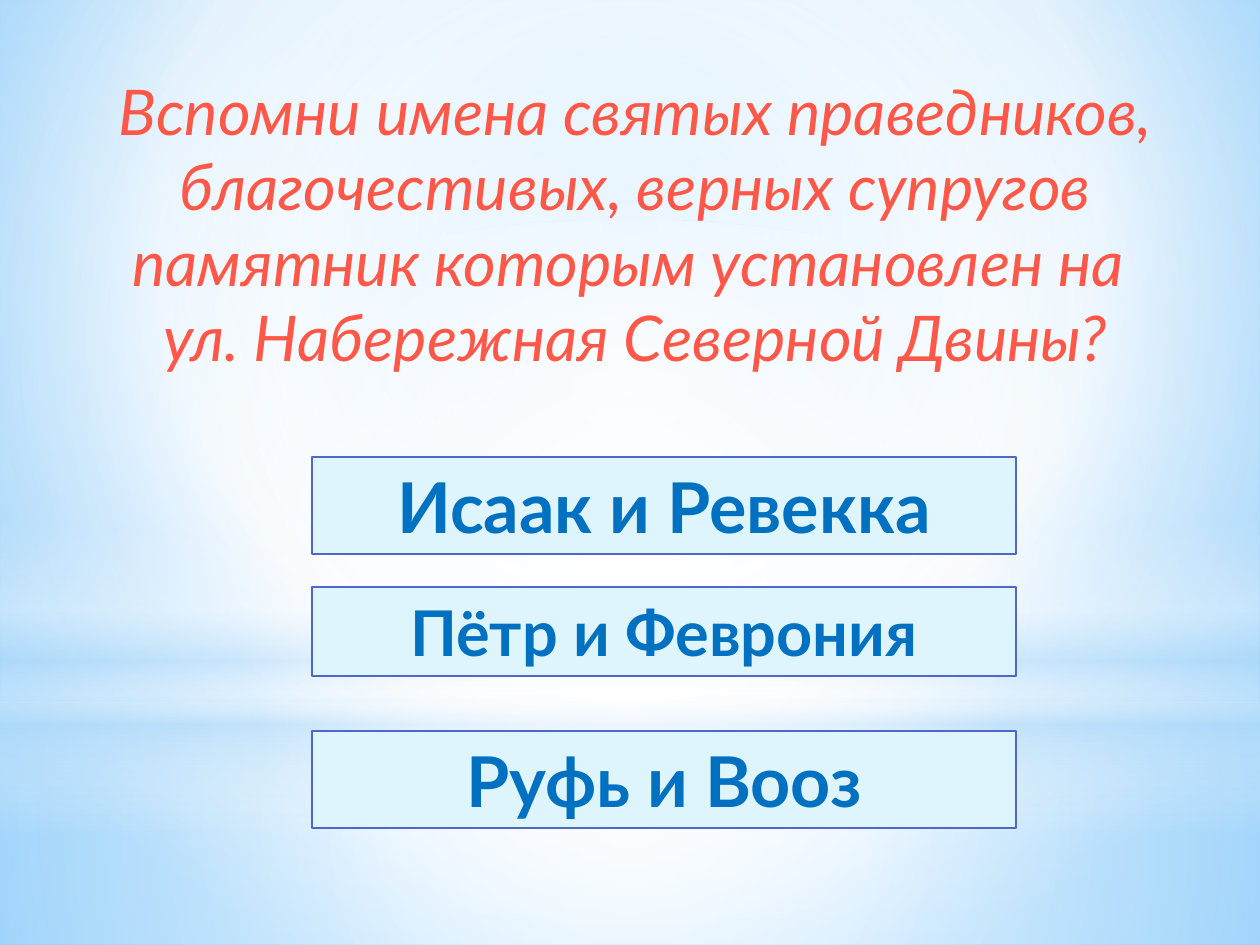
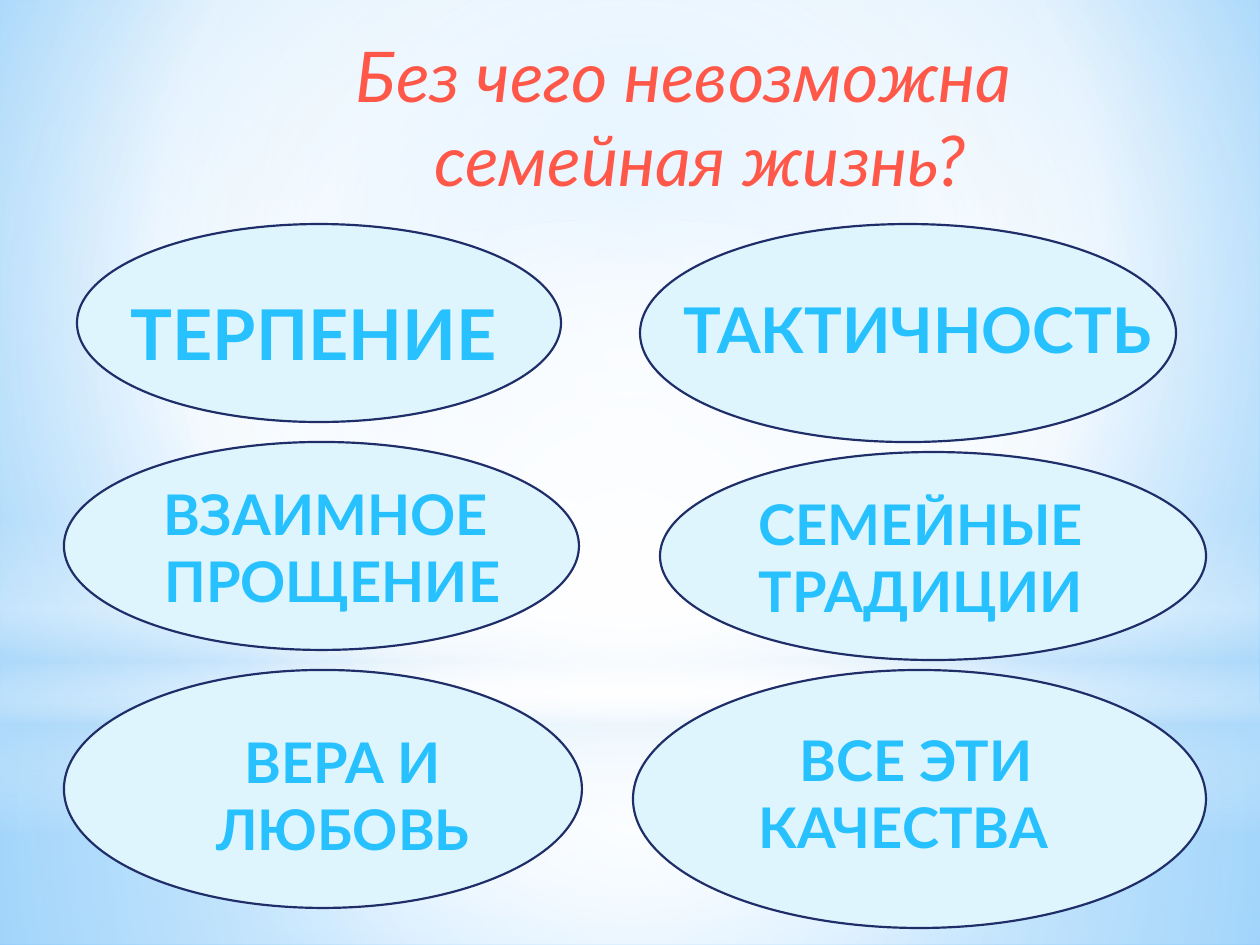
from typing import NamedTuple

import pptx
import pptx.dml.color
import pptx.enum.shapes
import pptx.enum.text
import pptx.oxml
import pptx.oxml.ns
import pptx.util

PX_PER_INCH = 126
SLIDE_WIDTH, SLIDE_HEIGHT = 1260, 945
FONT = "Lato"
TITLE_RED = "FF5748"
ANSWER_BLUE = "0070C0"
QUALITY_BLUE = "28C1FF"
PALE_FILL = "DFF5FD"
ANSWER_LINE = "4E67C8"
OVAL_LINE = "1F2E69"
WHITE, SKY = "FFFFFF", "B4DCFA"

RECTANGLE = pptx.enum.shapes.MSO_SHAPE.RECTANGLE
OVAL = pptx.enum.shapes.MSO_SHAPE.OVAL
CENTERED = (50, 50, 50, 50)


class Area(NamedTuple):
    left: int
    top: int
    width: int
    height: int


class Stop(NamedTuple):
    position: int
    color: str
    opacity: int = 100


class Gradient(NamedTuple):
    """A circular gradient around focus (left, top, right, bottom), or a vertical one without it."""
    stops: tuple[Stop, ...]
    focus: tuple[int, int, int, int] | None = CENTERED


class Glow(NamedTuple):
    kind: int
    area: Area
    gradient: Gradient


class TextStyle(NamedTuple):
    size: int
    color: str
    bold: bool = False
    italic: bool = False


class Answer(NamedTuple):
    text: str
    top: int
    height: int
    size: int


class Quality(NamedTuple):
    text: str
    oval: Area
    label: Area
    size: int = 32
    last_line_indent: int = 0


BACKDROP = Gradient((Stop(0, "9ED5FF"), Stop(60, WHITE), Stop(100, "5BB9FF")), (20, 10, 20, 60))
GLOWS = (
    Glow(RECTANGLE, Area(0, 703, SLIDE_WIDTH, 242),
         Gradient((Stop(0, WHITE, 91), Stop(37, WHITE, 76), Stop(100, SKY, 79)))),
    Glow(RECTANGLE, Area(0, 0, SLIDE_WIDTH, 703),
         Gradient((Stop(0, WHITE, 89), Stop(48, WHITE, 62), Stop(100, SKY, 79)))),
    Glow(RECTANGLE, Area(0, 519, SLIDE_WIDTH, 315),
         Gradient((Stop(0, WHITE, 0), Stop(29, WHITE, 30), Stop(45, SKY, 40),
                   Stop(55, WHITE, 26), Stop(65, SKY, 60), Stop(100, WHITE, 0)), None)),
    Glow(OVAL, Area(0, 220, SLIDE_WIDTH, 703),
         Gradient((Stop(0, WHITE), Stop(56, WHITE, 0)))),
)

ANSWER_LEFT, ANSWER_WIDTH = 312, 704
ANSWERS = (
    Answer("Исаак и Ревекка", 457, 97, 40),
    Answer("Пётр и Феврония", 587, 89, 36),
    Answer("Руфь и Вооз", 731, 97, 40),
)
QUALITIES = (
    Quality("ТЕРПЕНИЕ", Area(77, 224, 484, 198), Area(105, 284, 417, 97), 40),
    Quality("ТАКТИЧНОСТЬ", Area(640, 224, 536, 218), Area(660, 284, 515, 89), 36),
    Quality("ВЗАИМНОЕ \nПРОЩЕНИЕ", Area(64, 442, 515, 208), Area(83, 473, 499, 149)),
    Quality("СЕМЕЙНЫЕ ТРАДИЦИИ", Area(660, 452, 546, 208), Area(660, 483, 522, 149)),
    Quality("ВЕРА И ЛЮБОВЬ", Area(64, 670, 518, 238), Area(184, 721, 318, 149)),
    Quality("ВСЕ ЭТИ \nКАЧЕСТВА", Area(633, 670, 573, 258), Area(698, 719, 450, 149),
            last_line_indent=40),
)


def px(length: int) -> int:
    return round(length * pptx.util.Inches(1) / PX_PER_INCH)


def rgb(color: str) -> pptx.dml.color.RGBColor:
    return pptx.dml.color.RGBColor.from_string(color)


def place(area: Area) -> list[int]:
    return [px(length) for length in area]


def set_gradient(properties, gradient: Gradient) -> None:
    """Put the gradient where the shape or background properties hold an empty fill."""
    stops = "".join(
        f'<a:gs pos="{stop.position * 1000}"><a:srgbClr val="{stop.color}">'
        f'<a:alpha val="{stop.opacity * 1000}"/></a:srgbClr></a:gs>'
        for stop in gradient.stops)
    if gradient.focus:
        left, top, right, bottom = (side * 1000 for side in gradient.focus)
        direction = (f'<a:path path="circle"><a:fillToRect l="{left}" t="{top}" '
                     f'r="{right}" b="{bottom}"/></a:path>')
    else:
        direction = '<a:lin ang="5400000" scaled="0"/>'
    element = pptx.oxml.parse_xml(
        f'<a:gradFill {pptx.oxml.ns.nsdecls("a")} rotWithShape="1">'
        f'<a:gsLst>{stops}</a:gsLst>{direction}</a:gradFill>')
    empty_fill = properties.find(pptx.oxml.ns.qn("a:noFill"))
    properties.replace(empty_fill, element)


def add_plain_shape(page, kind: int, area: Area):
    shape = page.shapes.add_shape(kind, *place(area))
    shape.shadow.inherit = False
    return shape


def add_outlined_shape(page, kind: int, area: Area, line_color: str, line_width: float):
    shape = add_plain_shape(page, kind, area)
    shape.fill.solid()
    shape.fill.fore_color.rgb = rgb(PALE_FILL)
    shape.line.color.rgb = rgb(line_color)
    shape.line.width = pptx.util.Pt(line_width)
    return shape


def write(shape, text: str, style: TextStyle) -> None:
    frame = shape.text_frame
    frame.word_wrap = True
    frame.auto_size = pptx.enum.text.MSO_AUTO_SIZE.SHAPE_TO_FIT_TEXT
    frame.text = text
    for para in frame.paragraphs:
        para.alignment = pptx.enum.text.PP_ALIGN.CENTER
        for span in para.runs:
            span.font.name = FONT
            span.font.size = pptx.util.Pt(style.size)
            span.font.bold = style.bold
            span.font.italic = style.italic
            span.font.color.rgb = rgb(style.color)


def add_text(page, area: Area, text: str, style: TextStyle):
    box = page.shapes.add_textbox(*place(area))
    write(box, text, style)
    return box


def add_title(page, area: Area, text: str, size: int) -> None:
    add_text(page, area, text, TextStyle(size, TITLE_RED, italic=True))


def decorate_layout(layout, page) -> None:
    """Draw the glows on the page and move them to the layout, which all pages share."""
    for placeholder in list(layout.placeholders):
        layout.shapes.element.remove(placeholder.element)
    layout.background.fill.background()
    set_gradient(layout.element.find(".//" + pptx.oxml.ns.qn("p:bgPr")), BACKDROP)
    shapes = []
    for glow in GLOWS:
        shape = add_plain_shape(page, glow.kind, glow.area)
        shape.fill.background()
        shape.line.fill.background()
        set_gradient(shape.element.spPr, glow.gradient)
        shapes.append(shape)
    for shape in shapes:
        layout.shapes.element.append(shape.element)


def build_saints_question(page) -> None:
    add_title(page, Area(25, 66, 1221, 318),
              "Вспомни имена святых праведников, благочестивых, верных супругов\n"
              "памятник которым установлен на \n"
              "ул. Набережная Северной Двины?", 36)
    for answer in ANSWERS:
        area = Area(ANSWER_LEFT, answer.top, ANSWER_WIDTH, answer.height)
        shape = add_outlined_shape(page, RECTANGLE, area, ANSWER_LINE, 0.75)
        write(shape, answer.text, TextStyle(answer.size, ANSWER_BLUE, bold=True))


def build_family_question(page) -> None:
    add_title(page, Area(124, 26, 1136, 183), "Без чего невозможна \n семейная жизнь?", 40)
    for quality in QUALITIES:
        add_outlined_shape(page, OVAL, quality.oval, OVAL_LINE, 1.25)
        box = add_text(page, quality.label, quality.text,
                       TextStyle(quality.size, QUALITY_BLUE, bold=True))
        if quality.last_line_indent:
            properties = box.text_frame.paragraphs[-1]._p.get_or_add_pPr()
            properties.set("marR", str(px(quality.last_line_indent)))


def main() -> None:
    deck = pptx.Presentation()
    deck.slide_width, deck.slide_height = px(SLIDE_WIDTH), px(SLIDE_HEIGHT)
    blank = deck.slide_layouts[6]
    pages = [deck.slides.add_slide(blank) for _ in range(2)]
    decorate_layout(blank, pages[0])
    build_saints_question(pages[0])
    build_family_question(pages[1])
    deck.save("out.pptx")


if __name__ == "__main__":
    main()
